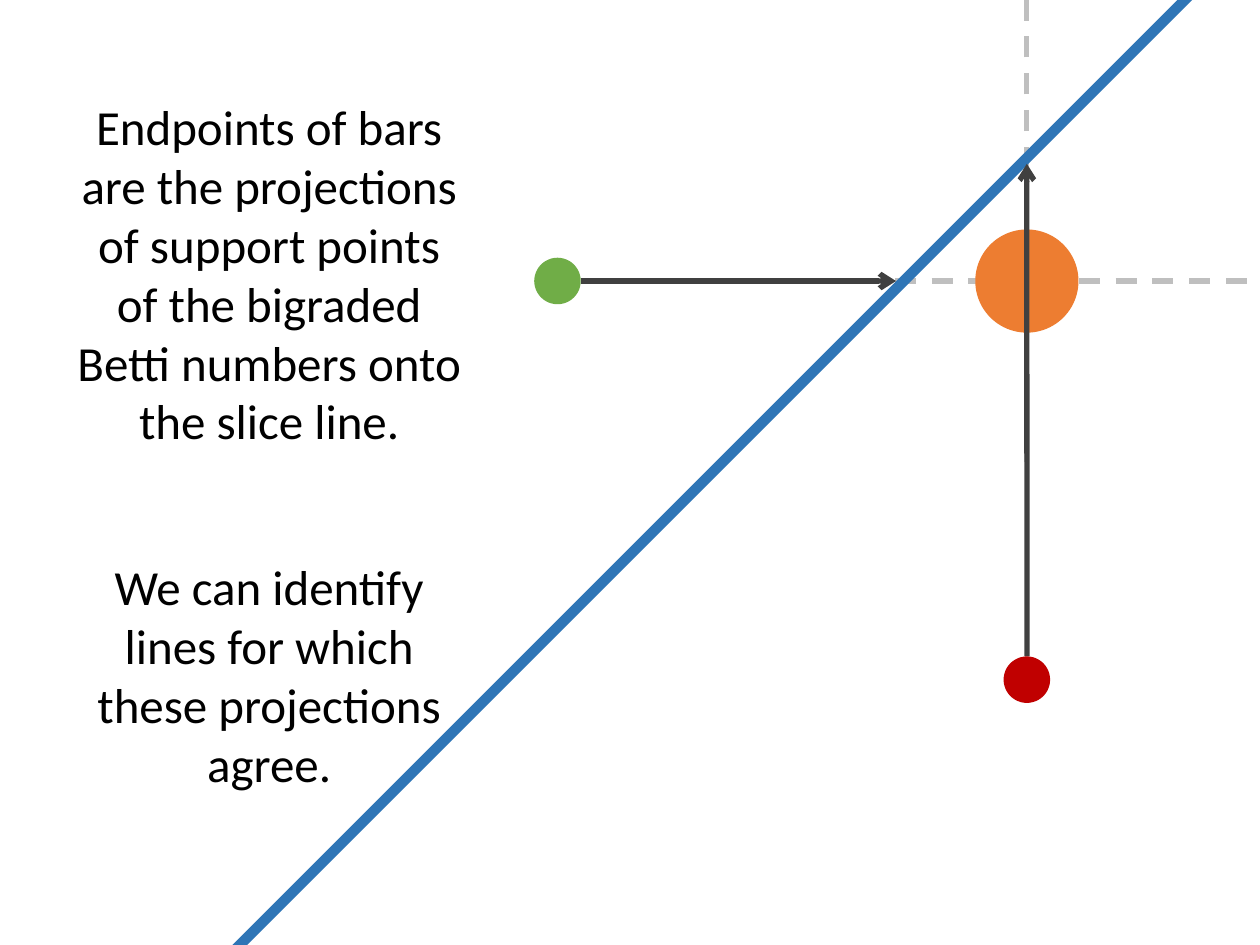
from lxml import etree
from pptx import Presentation
from pptx.dml.color import RGBColor
from pptx.enum import dml, shapes, text
from pptx.oxml.ns import qn
from pptx.util import Pt

WIDE, HIGH = 720, 540
ROW, COL = 160.6, 586.8  # the two lines of projection
DOT = 26.6
GREY, DARK = "BFBFBF", "404040"


def color(code):
    return RGBColor.from_string(code)


def add_dot(slide, x, y, size, fill):
    """Draw a plain circle centred on x, y."""
    dot = slide.shapes.add_shape(
        shapes.MSO_SHAPE.OVAL,
        Pt(x - size / 2), Pt(y - size / 2), Pt(size), Pt(size))
    dot.shadow.inherit = False
    dot.fill.solid()
    dot.fill.fore_color.rgb = color(fill)
    dot.line.fill.background()
    return dot


def add_line(slide, start, end, code, width=3, dash=False, arrow=False):
    line = slide.shapes.add_connector(
        shapes.MSO_CONNECTOR.STRAIGHT, *map(Pt, start + end))
    line.line.color.rgb = color(code)
    line.line.width = Pt(width)
    if dash:
        line.line.dash_style = dml.MSO_LINE.DASH
    props = line._element.spPr
    if arrow:
        tail = etree.SubElement(props.find(qn("a:ln")), qn("a:tailEnd"))
        tail.set("type", "arrow")
    etree.SubElement(props, qn("a:effectLst"))
    return line


def add_text(slide, words, left, top, width, height, size=28,
             font="Calibri", code="000000", align=text.PP_ALIGN.CENTER):
    box = slide.shapes.add_textbox(Pt(left), Pt(top), Pt(width), Pt(height))
    frame = box.text_frame
    frame.word_wrap = True
    frame.auto_size = text.MSO_AUTO_SIZE.SHAPE_TO_FIT_TEXT
    para = frame.paragraphs[0]
    para.alignment = align
    run = para.add_run()
    run.text = words
    run.font.name = font
    run.font.size = Pt(size)
    run.font.color.rgb = color(code)


def main():
    deck = Presentation()
    deck.slide_width, deck.slide_height = Pt(WIDE), Pt(HIGH)
    slide = deck.slides.add_slide(deck.slide_layouts[6])

    add_line(slide, (490.3, ROW), (750, ROW), GREY, dash=True)
    add_line(slide, (COL, 264.2), (COL, -26.6), GREY, dash=True)

    green_x, red_y = 318.6, 388.4
    add_dot(slide, COL, ROW, 59, "ED7D31")
    add_dot(slide, green_x, ROW, DOT, "70AD47")
    add_line(slide, (116, 561), (710, -33), "2E75B6", width=6)

    add_line(slide, (green_x + DOT / 2, ROW), (512, ROW), DARK, arrow=True)
    rise = add_line(slide, (COL, red_y - DOT / 2), (COL, 93.6), DARK,
                    arrow=True)
    red = add_dot(slide, COL, red_y, DOT, "C00000")
    rise.begin_connect(red, 0)

    add_text(slide, "Endpoints of bars are the projections of support points "
             "of the bigraded Betti numbers onto the slice line.",
             34.6, 51.8, 238.3, 211)
    add_text(slide, "We can identify lines for which these projections agree.",
             34.6, 314.6, 238.3, 143.3)

    deck.save("out.pptx")


if __name__ == "__main__":
    main()
